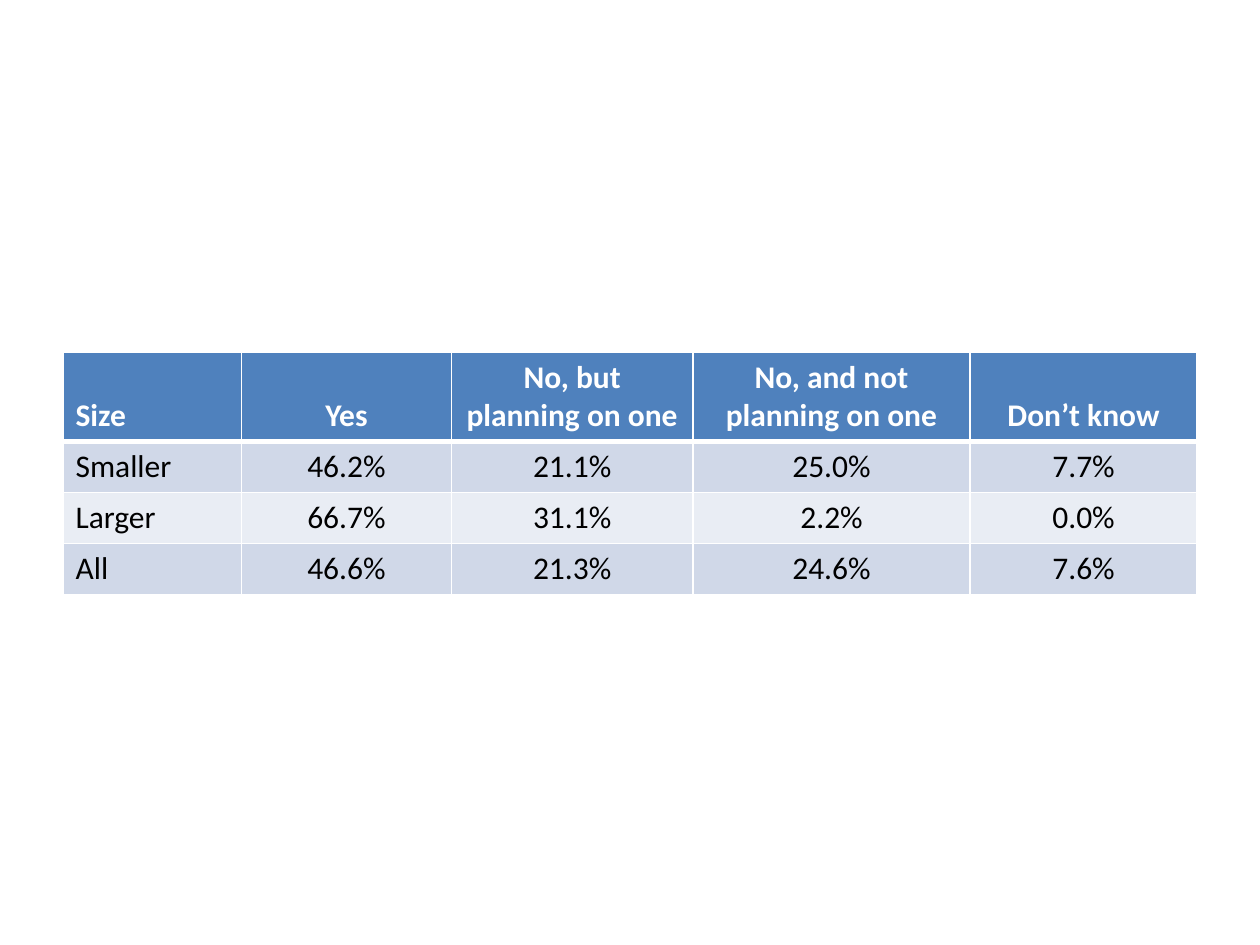
"""Build a slide with a table of survey answers by size."""
from lxml.etree import SubElement
from pptx import Presentation
from pptx.dml.color import RGBColor
from pptx.enum.text import MSO_ANCHOR as Anchor, PP_ALIGN as Align
from pptx.oxml.ns import qn
from pptx.util import Pt

WHITE, BLACK, BLUE = "FFFFFF", "000000", "4F81BD"
BANDS = ("D0D8E8", "E9EDF4")
COL_WIDTHS = (102, 120, 138, 158.4, 129.6)
HEADER_HEIGHT, ROW_HEIGHT = 50.4, 29.2
ROWS = (
    ("Size", "Yes", "No, but planning on one", "No, and not planning on one", "Don’t know"),
    ("Smaller", "46.2%", "21.1%", "25.0%", "7.7%"),
    ("Larger", "66.7%", "31.1%", "2.2%", "0.0%"),
    ("All", "46.6%", "21.3%", "24.6%", "7.6%"),
)


def rgb(value):
    return RGBColor.from_string(value)


def add_border(cell, side, width):
    ln = SubElement(cell._tc.get_or_add_tcPr(), qn(f"a:ln{side}"), w=str(Pt(width)))
    fill = SubElement(ln, qn("a:solidFill"))
    SubElement(fill, qn("a:srgbClr"), val=WHITE)


def style_cell(cell, row, col):
    header = row == 0
    widths = {"L": 1, "R": 1, "T": 3 if row == 1 else 1, "B": 3 if header else 1}
    for side, width in widths.items():
        add_border(cell, side, width)
    cell.fill.solid()
    cell.fill.fore_color.rgb = rgb(BLUE if header else BANDS[(row - 1) % 2])
    cell.vertical_anchor = Anchor.BOTTOM if header else Anchor.TOP


def write_cell(cell, text, row, col):
    header = row == 0
    p = cell.text_frame.paragraphs[0]
    p.alignment = Align.LEFT if col == 0 else Align.CENTER
    r = p.add_run()
    r.text = text
    r.font.name = "Calibri"
    r.font.size = Pt(18)
    r.font.bold = header
    r.font.color.rgb = rgb(WHITE if header else BLACK)


def add_answer_table(s, left, top):
    heights = [HEADER_HEIGHT] + [ROW_HEIGHT] * (len(ROWS) - 1)
    frame = s.shapes.add_table(len(ROWS), len(COL_WIDTHS), Pt(left), Pt(top),
                               Pt(sum(COL_WIDTHS)), Pt(sum(heights)))
    table = frame.table
    for column, width in zip(table.columns, COL_WIDTHS):
        column.width = Pt(width)
    for table_row, height in zip(table.rows, heights):
        table_row.height = Pt(height)
    for row, texts in enumerate(ROWS):
        for col, text in enumerate(texts):
            cell = table.cell(row, col)
            style_cell(cell, row, col)
            write_cell(cell, text, row, col)


def main():
    prs = Presentation()
    prs.slide_width, prs.slide_height = Pt(720), Pt(540)
    s = prs.slides.add_slide(prs.slide_layouts[6])
    add_answer_table(s, 36, 201)
    prs.save("out.pptx")


if __name__ == "__main__":
    main()
